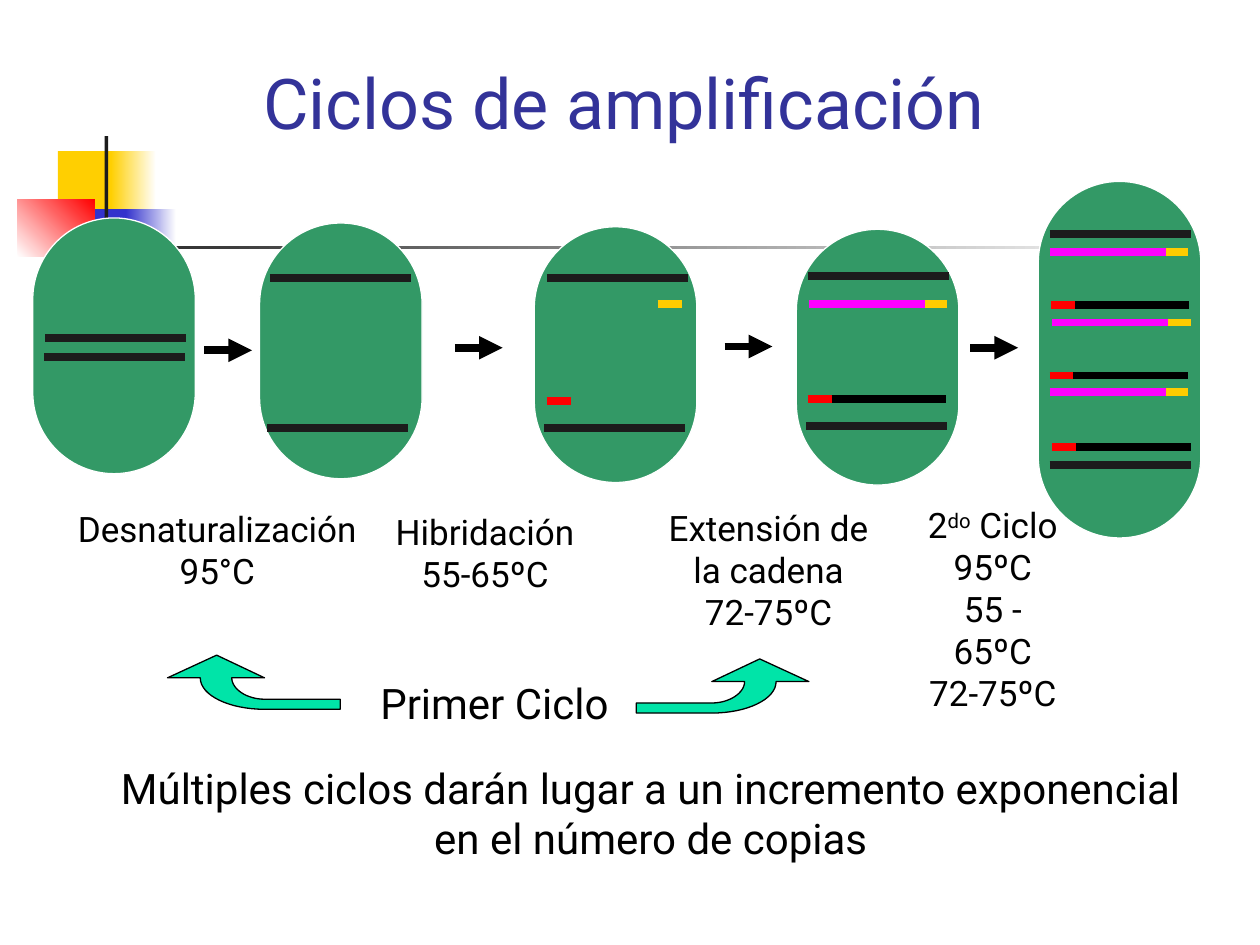
from lxml import etree
from pptx import Presentation
from pptx.dml.color import RGBColor
from pptx.enum import shapes, text
from pptx.oxml.ns import qn
from pptx.util import Inches, Pt

C = {"gold": "FFCF01", "blue": "3333CC", "red": "FF0000", "dark": "1C1C1C",
     "white": "FFFFFF", "green": "339966", "black": "000000", "yellow": "FFCC00",
     "magenta": "FF00FF", "mint": "00E4A8", "title": "333399"}
RGB = {name: RGBColor.from_string(value) for name, value in C.items()}

prs = Presentation()
prs.slide_width, prs.slide_height = Inches(10), Inches(7.5)
s = prs.slides.add_slide(prs.slide_layouts[6])


def add_text(parent, lines, x, y, w, h, size=20, color="black", center=True, wrap=False):
    """Add a text box; words between ^ marks are superscript."""
    tf = parent.shapes.add_textbox(Inches(x), Inches(y), Inches(w), Inches(h)).text_frame
    tf.word_wrap = wrap
    tf.auto_size = text.MSO_AUTO_SIZE.SHAPE_TO_FIT_TEXT
    for i, line in enumerate(lines):
        p = tf.add_paragraph() if i else tf.paragraphs[0]
        p.alignment = text.PP_ALIGN.CENTER if center else text.PP_ALIGN.LEFT
        for j, part in enumerate(line.split("^")):
            r = p.add_run()
            r.text = part
            r.font.name, r.font.size = "Roboto", Pt(size)
            r.font.color.rgb = RGB[color]
            if j % 2:
                r._r.get_or_add_rPr().set("baseline", "30000")


def add_line(x1, x2, y, color, arrow=False):
    """Add a horizontal strand or step arrow."""
    c = s.shapes.add_connector(shapes.MSO_CONNECTOR.STRAIGHT,
                               Inches(x1), Inches(y), Inches(x2), Inches(y))
    c.line.color.rgb, c.line.width = RGB[color], Pt(4.5)
    if arrow:
        etree.SubElement(c.line._get_or_add_ln(), qn("a:tailEnd"), type="triangle")
    etree.SubElement(c._element.spPr, qn("a:effectLst"))


# Corner decoration and rule: x, y, w, h, colours, gradient angle
for x, y, w, h, colors, angle in [
        (0.46, 1.2, 0.48, 0.52, ["gold"], 0),
        (0.88, 1.2, 0.36, 0.52, ["gold", "white"], 0),
        (0.59, 1.66, 0.46, 0.52, ["blue"], 0),
        (1, 1.66, 0.4, 0.52, ["blue", "white"], 0),
        (0.14, 1.58, 0.61, 0.46, ["white", "red"], 45),
        (0.83, 1.08, 0.03, 1.15, ["dark"], 0),
        (0.48, 1.95, 9, 0.03, ["dark", "white"], 0)]:
    sp = s.shapes.add_shape(shapes.MSO_SHAPE.RECTANGLE, Inches(x), Inches(y), Inches(w), Inches(h))
    sp.shadow.inherit = False
    sp.line.fill.background()
    if len(colors) == 1:
        sp.fill.solid()
        sp.fill.fore_color.rgb = RGB[colors[0]]
    else:
        sp.fill.gradient()
        sp.fill.gradient_angle = angle
        for stop, color in zip(sp.fill.gradient_stops, colors):
            stop.color.rgb = RGB[color]

# Reaction tubes
for x, y, h in [(0.26, 1.73, 2.03), (2.06, 1.77, 2.03), (4.24, 1.8, 2.03),
                (6.32, 1.82, 2.03), (8.24, 1.44, 2.83)]:
    sp = s.shapes.add_shape(shapes.MSO_SHAPE.ROUNDED_RECTANGLE,
                            Inches(x), Inches(y), Inches(1.29), Inches(h))
    sp.adjustments[0] = 0.5
    sp.shadow.inherit = False
    sp.fill.solid()
    sp.fill.fore_color.rgb = RGB["green"]
    sp.line.color.rgb, sp.line.width = RGB["white"], Pt(0.75)

# Template strands
for x, y in [(0.36, 2.68), (0.35, 2.83), (2.14, 2.21), (2.12, 3.4), (4.34, 2.21),
             (4.32, 3.4), (6.41, 2.19), (6.4, 3.38), (8.33, 1.86), (8.33, 3.69)]:
    add_line(x, x + 1.12, y, "dark")

# Primers bound to the templates
add_line(4.34, 4.53, 3.18, "red")
add_line(5.22, 5.41, 2.41, "yellow")

# Copied strands: a primer plus its extension
for x, y in [(6.41, 3.17), (8.34, 2.42), (8.33, 2.98), (8.35, 3.55)]:
    add_line(x, x + 0.19, y, "red")
    add_line(x + 0.19, x + 1.1, y, "black")
for x, y in [(6.42, 2.41), (8.33, 2), (8.35, 2.56), (8.33, 3.11)]:
    add_line(x + 0.92, x + 1.1, y, "yellow")
    add_line(x, x + 0.92, y, "magenta")

# Step arrows
for x, y in [(1.62, 2.78), (3.61, 2.76), (5.75, 2.75), (7.7, 2.76)]:
    add_line(x, x + 0.38, y, "black", arrow=True)

# Step labels
add_text(s, ["Desnaturalización", "95°C"], 0.51, 3.98, 2.43, 0.77)
add_text(s, ["Hibridación", "55-65ºC"], 3.03, 4, 1.64, 0.77)
add_text(s, ["Extensión de", "la cadena", "72-75ºC"], 5.2, 3.97, 1.8, 1.11)
add_text(s, ["2^do^ Ciclo", "95ºC", "55 - 65ºC", "72-75ºC"], 7.21, 3.95, 1.34, 1.45, wrap=True)

# First cycle: label between two mirrored bent arrows
grp = s.shapes.add_group_shape()
add_text(grp, ["Primer Ciclo"], 2.92, 5.33, 2.04, 0.51, size=24, center=False)
outer = [(1.59, 5.38), (1.59, 5.52), (1.82, 5.63), (2.1, 5.63)]
inner = [(2.1, 5.55), (1.96, 5.55), (1.84, 5.47), (1.84, 5.38)]
steps = [i / 16 for i in range(17)]
curves = [[tuple((1 - t) ** 3 * a + 3 * t * (1 - t) ** 2 * b + 3 * t * t * (1 - t) * c + t ** 3 * d
                 for a, b, c, d in zip(*bezier)) for t in steps] for bezier in (outer, inner)]
outline = [(1.72, 5.2), (1.33, 5.38), *curves[0], (2.7, 5.63), (2.7, 5.55),
           *curves[1], (2.1, 5.38)]
for sign, dx, dy in [(1, 0, 0), (-1, 7.75, 0.03)]:
    points = [(Inches(dx + sign * x), Inches(y + dy)) for x, y in outline]
    builder = grp.shapes.build_freeform(*points[0])
    builder.add_line_segments(points[1:], close=True)
    sp = builder.convert_to_shape()
    sp.shadow.inherit = False
    sp.fill.solid()
    sp.fill.fore_color.rgb = RGB["mint"]
    sp.line.color.rgb, sp.line.width = RGB["black"], Pt(0.75)

# Conclusion and title
add_text(s, ["Múltiples ciclos darán lugar a un incremento exponencial en el número de copias"],
         0.83, 6, 8.67, 0.91, size=24, wrap=True)
add_text(s, ["Ciclos de amplificación"], 1.99, 0.42, 6, 0.77, size=40, color="title", center=False)

prs.save("out.pptx")
